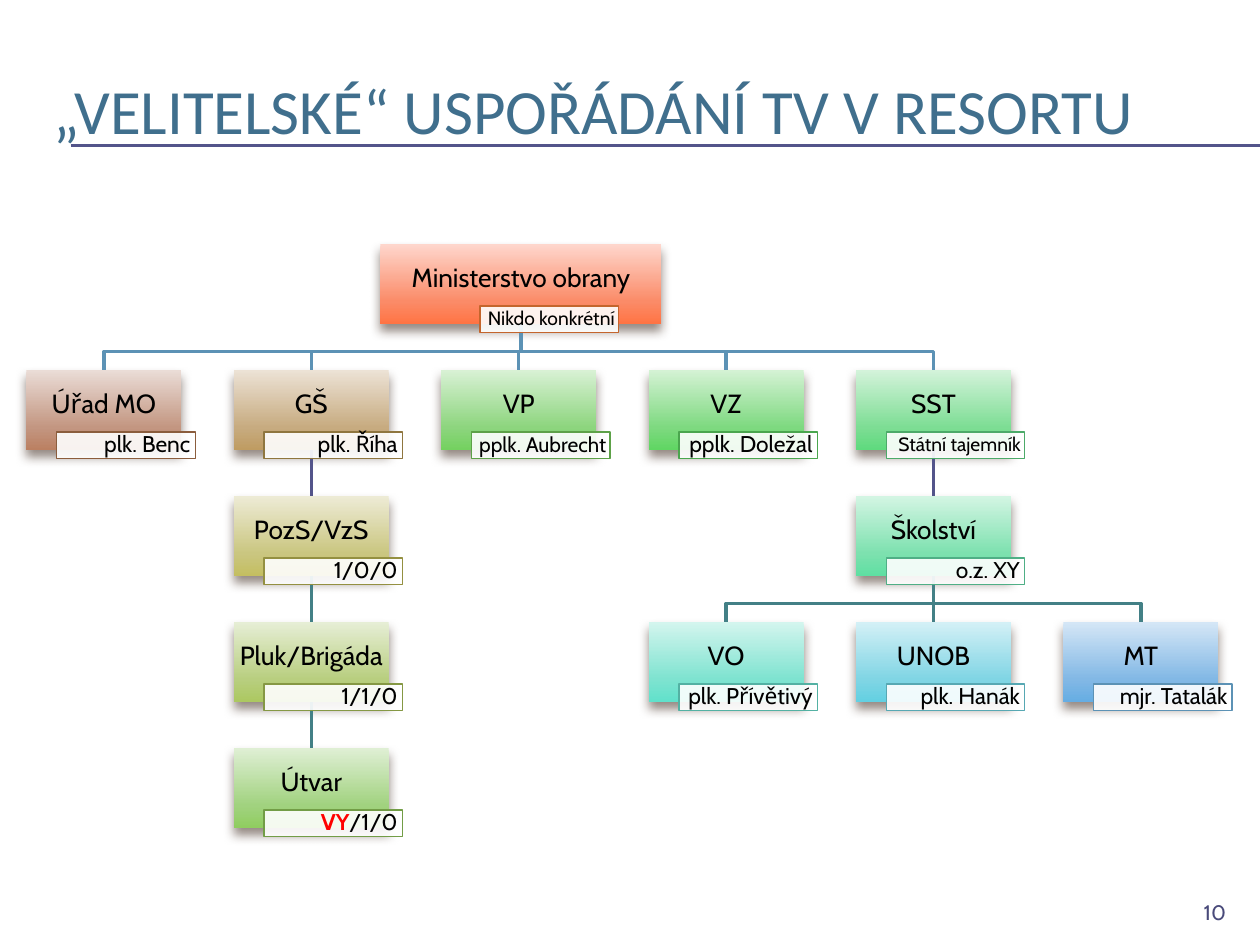
from copy import deepcopy

from lxml.etree import SubElement
from pptx import Presentation
from pptx.dml.color import RGBColor
from pptx.enum.shapes import MSO_CONNECTOR as CONN, MSO_SHAPE as SHAPE
from pptx.enum.text import MSO_ANCHOR as ANCHOR, PP_ALIGN as ALIGN
from pptx.oxml.ns import qn
from pptx.util import Inches, Pt

# ---- Content ----
TITLE = "„VELITELSKÉ“ USPOŘÁDÁNÍ TV V RESORTU"
PAGE = "10"
ROOT = "Ministerstvo obrany"
RED_LEAD = "VY"

# name, parent, column, row, badge text, badge size
NODES = [
    (ROOT, None, None, 0, "Nikdo konkrétní", 11),
    ("Úřad MO", ROOT, 0, 1, "plk. Benc", 13),
    ("GŠ", ROOT, 1, 1, "plk. Říha", 13),
    ("PozS/VzS", "GŠ", 1, 2, "1/0/0", 13),
    ("Pluk/Brigáda", "PozS/VzS", 1, 3, "1/1/0", 13),
    ("Útvar", "Pluk/Brigáda", 1, 4, "VY/1/0", 13),
    ("VP", ROOT, 2, 1, "pplk. Aubrecht", 12),
    ("VZ", ROOT, 3, 1, "pplk. Doležal", 13),
    ("SST", ROOT, 4, 1, "Státní tajemník", 11),
    ("Školství", "SST", 4, 2, "o.z. XY", 13),
    ("VO", "Školství", 3, 3, "plk. Přívětivý", 13),
    ("UNOB", "Školství", 4, 3, "plk. Hanák", 13),
    ("MT", "Školství", 5, 3, "mjr. Tatalák", 13),
]

COLORS = {"title": "406F8D", "page": "494A7A", "rule": "53548A", "text": "000000",
          "red": "FF0000", "badge": "FFFFFF", "shadow": "4E3B30"}
LINK_COLORS = {1: "5C92B5", 2: "53548A", 3: "438086", 4: "438086"}  # by child row
# three gradient colours from top to bottom, then the badge outline
NODE_COLORS = {
    ROOT: ("FED6CC", "FB8B68", "FF7444", "C4652D"),
    "Úřad MO": ("EADCD6", "C39681", "BB8062", "8B5D3D"),
    "GŠ": ("ECE2D5", "C7AB80", "BF9C62", "8F763F"),
    "PozS/VzS": ("EDEBD5", "CAC680", "C4BE61", "949041"),
    "Pluk/Brigáda": ("E6EED5", "B8CE7F", "ACC861", "859844"),
    "Útvar": ("DFEFD4", "A1D27F", "90CD60", "729D46"),
    "VP": ("D8F1D4", "8DD57E", "74D160", "5DA148"),
    "VZ": ("D4F2D4", "7ED980", "60D663", "4AA64E"),
    "SST": ("D3F3DA", "7DDD94", "5FDA7E", "4CAA69"),
    "Školství": ("D3F5E3", "7DE1AF", "5FDFA2", "4FAF86"),
    "VO": ("D3F5EE", "7EE3D0", "61E1CB", "53B1A3"),
    "UNOB": ("D3F0F6", "80D5E4", "63D0E2", "57A8B3"),
    "MT": ("D4E6F6", "82B8E5", "66ADE3", "5C92B5"),
}
STOPS = (0, 0.72, 1)

# ---- Grid, in inches ----
LEFT, TOP, ROW_STEP = 0.21, 1.94, 1.0
COL_STEP = (8.44 - LEFT) / 5
BOX_W, BOX_H = 1.23, 0.63
ROOT_X, ROOT_W = 3.02, 2.23
BADGE_W, BADGE_H, BADGE_DX, ROOT_BADGE_DX, BADGE_DY = 1.1, 0.21, 0.24, 0.79, 0.49
BEND = 0.22  # drop from a box to the bend of its link

prs = Presentation()
prs.slide_width, prs.slide_height = Inches(10), Inches(7.5)
slide = prs.slides.add_slide(prs.slide_layouts[6])
shapes = slide.shapes


def rgb(value):
    return RGBColor.from_string(value)


def write(s, runs, size, align, anchor, insets, font="Cabin", spacing=None, wrap=True):
    """Put runs of (text, colour, bold) into a shape; insets go left, top, right, bottom."""
    tf = s.text_frame
    frame = {"word_wrap": wrap, "vertical_anchor": anchor}
    sides = ("margin_left", "margin_top", "margin_right", "margin_bottom")
    frame.update(zip(sides, map(Inches, insets)))
    for name, value in frame.items():
        setattr(tf, name, value)
    p = tf.paragraphs[0]
    p.alignment, p.line_spacing = align, spacing
    for text, color, bold in runs:
        r = p.add_run()
        r.text = text
        for name, value in {"name": font, "size": Pt(size), "bold": bold}.items():
            setattr(r.font, name, value)
        r.font.color.rgb = rgb(color)


def add_rect(x, y, w, h):
    s = shapes.add_shape(SHAPE.RECTANGLE, *map(Inches, (x, y, w, h)))
    s.shadow.inherit = False
    return s


def add_line(color, width, x1=0, y1=0, x2=0, y2=0):
    s = shapes.add_connector(CONN.STRAIGHT, *map(Inches, (x1, y1, x2, y2)))
    s.line.color.rgb, s.line.width = rgb(color), Pt(width)
    SubElement(s._element.spPr, qn("a:effectLst"))
    return s


def add_box(name, x, y, w):
    s = add_rect(x, y, w, BOX_H)
    s.line.fill.background()
    # gradient from top to bottom
    s.fill.gradient()
    s.fill.gradient_angle = 270
    gs_list = s._element.spPr.find(".//" + qn("a:gsLst"))
    gs_list.append(deepcopy(gs_list[0]))
    for stop, position, color in zip(s.fill.gradient_stops, STOPS, NODE_COLORS[name]):
        stop.position, stop.color.rgb = position, rgb(color)
    # soft shadow below
    effects = s._element.spPr.find(qn("a:effectLst"))
    shadow = SubElement(effects, qn("a:outerShdw"), blurRad=str(Pt(6)), dist=str(Pt(4)),
                        dir="5400000", rotWithShape="0")
    color = SubElement(shadow, qn("a:srgbClr"), val=COLORS["shadow"])
    SubElement(color, qn("a:alpha"), val="60000")
    write(s, [(name, COLORS["text"], False)], 15, ALIGN.CENTER, ANCHOR.MIDDLE,
          (0.01, 0.01, 0.01, 0.09), spacing=0.9)
    return s


def add_link(parent, child, color):
    x1, x2 = (s.left + s.width // 2 for s in (parent, child))
    if abs(x1 - x2) < Inches(0.01):
        s = add_line(color, 2)
        s.begin_connect(parent, 2)
        s.end_connect(child, 0)
        return
    y1 = parent.top + parent.height
    bend = y1 + Inches(BEND)
    path = shapes.build_freeform(x1, y1)
    path.add_line_segments([(x1, bend), (x2, bend), (x2, child.top)], close=False)
    s = path.convert_to_shape()
    s.shadow.inherit = False
    s.fill.background()
    s.line.color.rgb, s.line.width = rgb(color), Pt(2)


def add_badge(name, x, y, text, size):
    s = add_rect(x, y, BADGE_W, BADGE_H)
    s.fill.solid()
    s.fill.fore_color.rgb = rgb(COLORS["badge"])
    fill_color = s._element.spPr.find(qn("a:solidFill"))[0]
    SubElement(fill_color, qn("a:alpha"), val="90000")
    s.line.color.rgb, s.line.width = rgb(NODE_COLORS[name][3]), Pt(0.79)
    runs = [(text, COLORS["text"], False)]
    if text.startswith(RED_LEAD):
        runs = [(RED_LEAD, COLORS["red"], True),
                (text[len(RED_LEAD):], COLORS["text"], False)]
    inset = 0.04 if size == 13 else 0.03
    write(s, runs, size, ALIGN.RIGHT, ANCHOR.MIDDLE, (inset, 0.01, inset, 0.01),
          spacing=0.9, wrap=False)


# ---- Title, double rule and page number ----
for y in (1.15, 1.16):
    add_line(COLORS["rule"], 0.75, 0.56, y, 10, y)
s = shapes.add_textbox(*map(Inches, (0.33, 0.5, 9.5, 0.65)))
write(s, [(TITLE, COLORS["title"], False)], 36, ALIGN.LEFT, ANCHOR.TOP,
      (0.1, 0.07, 0.1, 0), font="Calibri")
s = shapes.add_textbox(*map(Inches, (9, 7.08, 0.83, 0.27)))
write(s, [(PAGE, COLORS["page"], False)], 12, ALIGN.RIGHT, ANCHOR.BOTTOM,
      (0.1, 0.01, 0.1, 0.01))

# ---- Chart: boxes, then links, then badges over the links ----
boxes = {}
for name, parent, col, row, *_ in NODES:
    x, w = (ROOT_X, ROOT_W) if parent is None else (LEFT + col * COL_STEP, BOX_W)
    boxes[name] = add_box(name, x, TOP + row * ROW_STEP, w)
for name, parent, col, row, *_ in NODES:
    if parent:
        add_link(boxes[parent], boxes[name], LINK_COLORS[row])
for name, parent, col, row, text, size in NODES:
    dx = BADGE_DX if parent else ROOT_BADGE_DX
    add_badge(name, boxes[name].left.inches + dx, boxes[name].top.inches + BADGE_DY,
              text, size)

prs.save("out.pptx")
